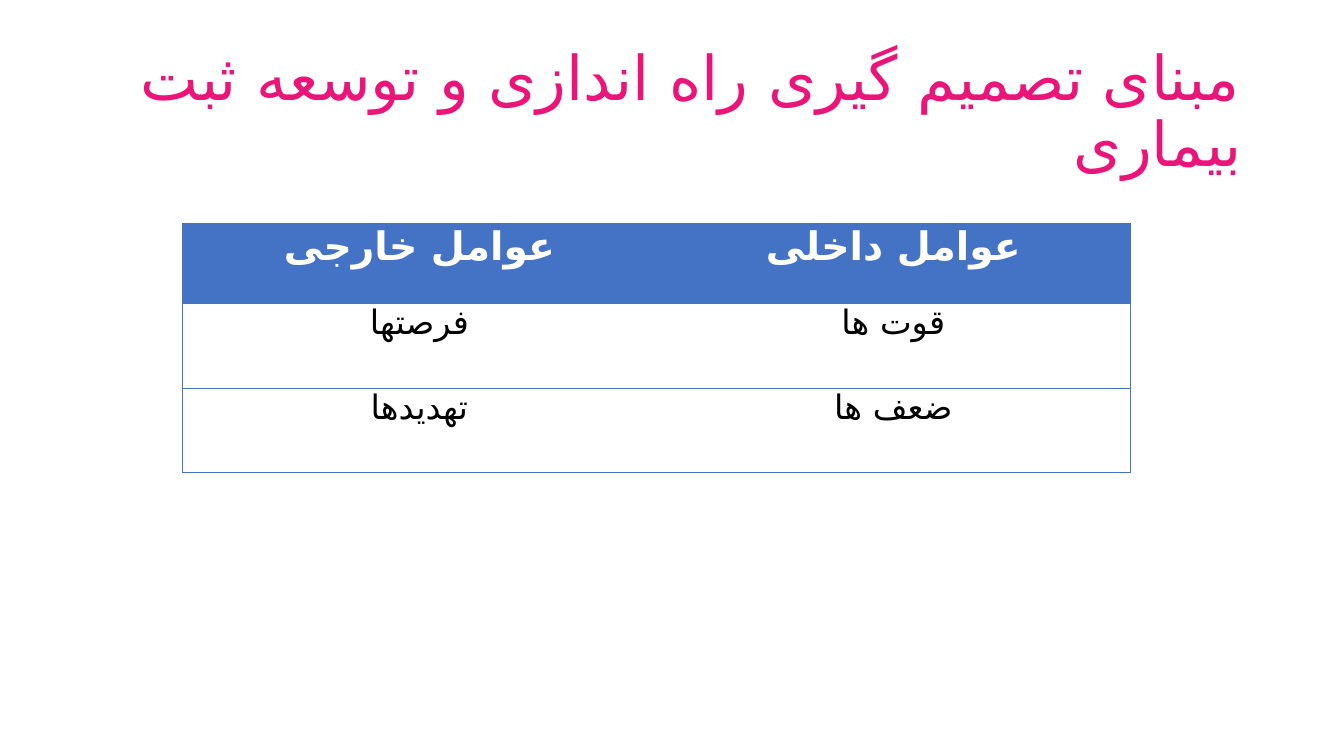
import dataclasses

import lxml.etree
import pptx
import pptx.dml.color
import pptx.enum.lang
import pptx.enum.text
import pptx.oxml.ns
import pptx.util

Inches = pptx.util.Inches
RGBColor = pptx.dml.color.RGBColor
Align = pptx.enum.text.PP_ALIGN
Anchor = pptx.enum.text.MSO_ANCHOR
qn = pptx.oxml.ns.qn

PINK = RGBColor(0xEB, 0x15, 0x7A)
BLUE = RGBColor(0x44, 0x72, 0xC4)
WHITE = RGBColor(0xFF, 0xFF, 0xFF)
BLACK = RGBColor(0, 0, 0)
PLAIN = "{2D5ABB26-0587-4C30-8999-92F81FD0307C}"  # table style without grid
SCRIPT = "DejaVu Sans"  # face for the Persian letters


@dataclasses.dataclass(frozen=True)
class Style:
    font: str
    size: int
    color: RGBColor
    align: Align
    bold: bool = False


@dataclasses.dataclass(frozen=True)
class Row:
    texts: tuple[str, str]
    height: float
    style: Style
    fill: RGBColor


TITLE = Style("TeX Gyre Schola", 44, PINK, Align.RIGHT)
HEAD = Style("Calibri", 28, WHITE, Align.CENTER, True)
BODY = Style("Calibri", 24, BLACK, Align.CENTER)
ROWS = (
    Row(("عوامل خارجی", "عوامل داخلی"), 0.79, HEAD, BLUE),
    Row(("فرصتها", "قوت ها"), 0.84, BODY, WHITE),
    Row(("تهدیدها", "ضعف ها"), 0.84, BODY, WHITE),
)


def write(frame: pptx.text.text.TextFrame, text: str, style: Style) -> None:
    """Set one right-to-left paragraph in the given style."""
    frame.text = text
    para = frame.paragraphs[0]
    para.alignment = style.align
    para._p.get_or_add_pPr().set("rtl", "1")
    run = para.runs[0]
    run.font.name = style.font
    run.font.size = pptx.util.Pt(style.size)
    run.font.bold = style.bold
    run.font.color.rgb = style.color
    run.font.language_id = pptx.enum.lang.MSO_LANGUAGE_ID.FARSI
    face = lxml.etree.SubElement(run._r.get_or_add_rPr(), qn("a:cs"))
    face.set("typeface", SCRIPT)


def border(cell: pptx.table._Cell, sides: str) -> None:
    """Draw thin blue lines on the named sides and none on the others."""
    props = cell._tc.get_or_add_tcPr()
    for side in "LRTB":
        line = lxml.etree.SubElement(props, qn(f"a:ln{side}"))
        if side in sides:
            line.set("w", str(pptx.util.Pt(0.5)))
            fill = lxml.etree.SubElement(line, qn("a:solidFill"))
            lxml.etree.SubElement(fill, qn("a:srgbClr")).set("val", str(BLUE))
        else:
            lxml.etree.SubElement(line, qn("a:noFill"))


def add_title(slide: pptx.slide.Slide, text: str) -> None:
    title = slide.shapes.title
    title.left, title.top = Inches(0.92), Inches(0.4)
    title.width, title.height = Inches(11.5), Inches(1.45)
    frame = title.text_frame
    frame.word_wrap = True
    frame.auto_size = pptx.enum.text.MSO_AUTO_SIZE.NONE
    frame.vertical_anchor = Anchor.MIDDLE
    write(frame, text, TITLE)
    frame.paragraphs[0].line_spacing = 0.9


def add_grid(slide: pptx.slide.Slide, rows: tuple[Row, ...]) -> None:
    height = sum(row.height for row in rows)
    shape = slide.shapes.add_table(
        len(rows), 2, Inches(1.81), Inches(2.22), Inches(9.4), Inches(height)
    )
    table = shape.table
    table.horz_banding = False
    table._tbl.tblPr.find(qn("a:tableStyleId")).text = PLAIN
    for i, row in enumerate(rows):
        table.rows[i].height = Inches(row.height)
        for cell, text, edge in zip(table.rows[i].cells, row.texts, "LR"):
            cell.margin_top = cell.margin_bottom = 0
            cell.vertical_anchor = Anchor.TOP
            write(cell.text_frame, text, row.style)
            border(cell, edge + "TB")
            cell.fill.solid()
            cell.fill.fore_color.rgb = row.fill


def main() -> None:
    deck = pptx.Presentation()
    deck.slide_width, deck.slide_height = Inches(13.33), Inches(7.5)
    slide = deck.slides.add_slide(deck.slide_layouts.get_by_name("Title Only"))
    # Heading
    add_title(slide, "مبنای تصمیم گیری راه اندازی و توسعه ثبت بیماری")
    # Internal and external factors
    add_grid(slide, ROWS)
    deck.save("out.pptx")


if __name__ == "__main__":
    main()
